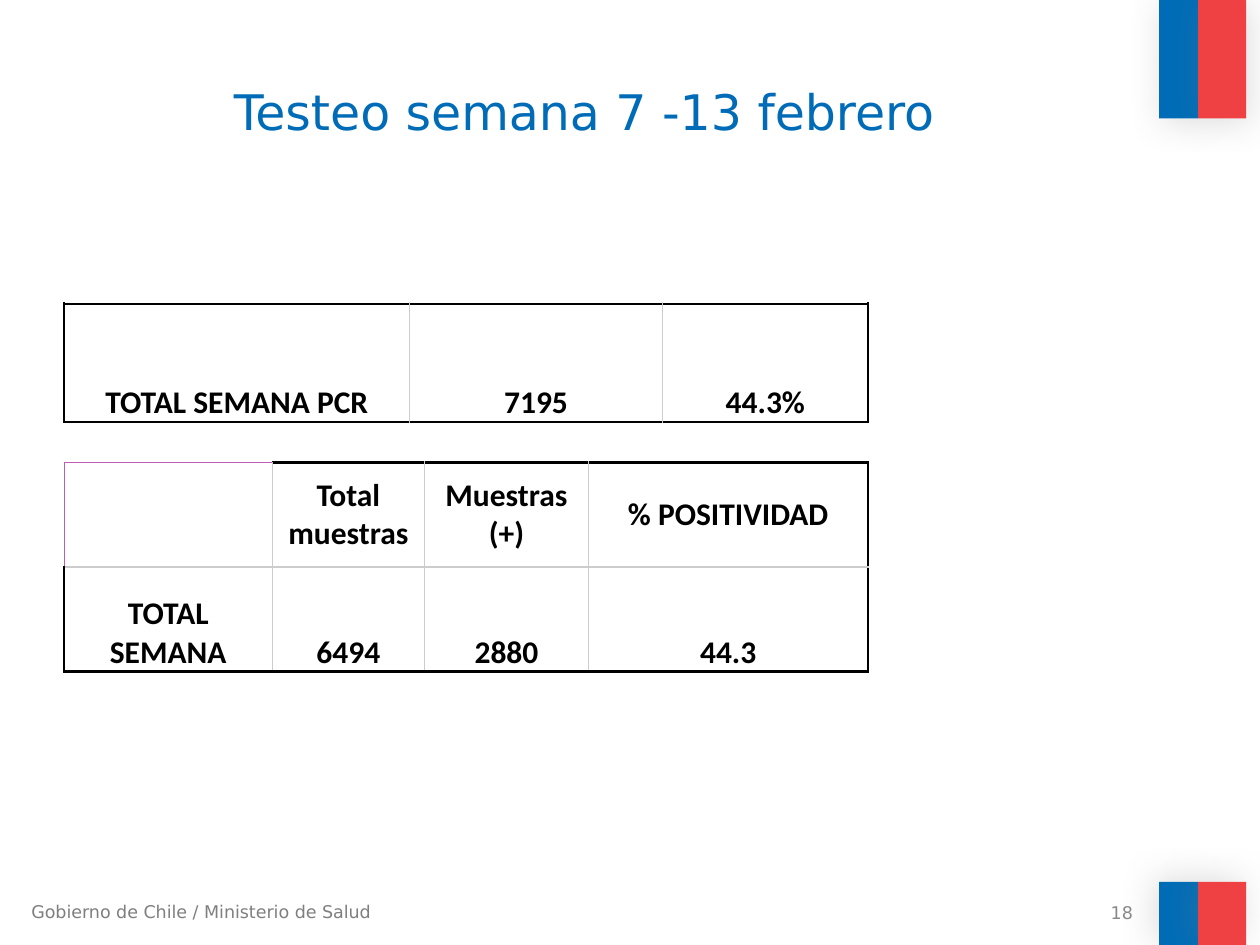
import pptx
import pptx.dml.color
import pptx.enum.shapes
import pptx.enum.text
import pptx.oxml
import pptx.oxml.ns
import pptx.util

Inches = pptx.util.Inches
Pt = pptx.util.Pt
ALIGN = pptx.enum.text.PP_ALIGN
ANCHOR = pptx.enum.text.MSO_ANCHOR
NS = pptx.oxml.ns.nsdecls("a")

COLORS = {
    "blue": "006CB7", "red": "EF4144", "shade": "808080",
    "foot": "7F7F7F", "page": "898989", "black": "000000",
    "white": "FFFFFF", "grid": "CCCCCC", "blank": "C05CB4",
}


def rgb(name):
    return pptx.dml.color.RGBColor.from_string(COLORS[name])


def style(frame, size, font, color, align, bold=False):
    for para in frame.paragraphs:
        para.alignment = align
        for run in para.runs:
            run.font.size = Pt(size)
            run.font.name = font
            run.font.bold = bold
            run.font.color.rgb = rgb(color)


def add_bar(slide, box, color, angle):
    """Add a flag stripe with a soft shadow cast at the given angle."""
    bar = slide.shapes.add_shape(
        pptx.enum.shapes.MSO_SHAPE.RECTANGLE, *map(Inches, box))
    bar.fill.solid()
    bar.fill.fore_color.rgb = rgb(color)
    bar.line.fill.background()
    bar.element.spPr.append(pptx.oxml.parse_xml(
        f'<a:effectLst {NS}><a:outerShdw blurRad="{Pt(20)}" dist="{Pt(3)}" '
        f'dir="{angle * 60000}" rotWithShape="0">'
        f'<a:srgbClr val="{COLORS["shade"]}"><a:alpha val="25000"/>'
        '</a:srgbClr></a:outerShdw></a:effectLst>'))


def add_title(slide, text):
    title = slide.shapes.title
    title.left, title.top = Inches(0.17), Inches(0.6)
    title.width, title.height = Inches(8.93), Inches(0.82)
    frame = title.text_frame
    frame.text = text
    frame.vertical_anchor = ANCHOR.TOP
    style(frame, 28, "DejaVu Sans", "blue", ALIGN.CENTER)


def add_note(slide, box, text, color, align, anchor):
    frame = slide.shapes.add_textbox(*map(Inches, box)).text_frame
    frame.word_wrap = True
    frame.vertical_anchor = anchor
    frame.text = text
    style(frame, 10, "DejaVu Sans", color, align)


def set_edge(cell, side, color, width):
    cell._tc.get_or_add_tcPr().append(pptx.oxml.parse_xml(
        f'<a:ln{side} {NS} w="{Pt(width)}"><a:solidFill>'
        f'<a:srgbClr val="{COLORS[color]}"/></a:solidFill></a:ln{side}>'))


def set_cell(cell, text, outer, anchor):
    """Fill a cell; outer maps each side to whether it is on the table's rim."""
    for side, rim in outer.items():
        if rim and not text:
            set_edge(cell, side, "blank", 0.75)
        elif rim:
            set_edge(cell, side, "black", 1.5)
        else:
            set_edge(cell, side, "grid", 0.75)
    cell.fill.solid()
    cell.fill.fore_color.rgb = rgb("white")
    cell.margin_left = cell.margin_right = Inches(0.03)
    cell.margin_top = cell.margin_bottom = 0
    cell.vertical_anchor = anchor
    cell.text_frame.text = text
    style(cell.text_frame, 18, "Calibri", "black", ALIGN.CENTER, True)


def add_table(slide, top, widths, height, rows):
    last_row, last_col = len(rows) - 1, len(widths) - 1
    table = slide.shapes.add_table(
        len(rows), len(widths), Inches(0.51), Inches(top),
        Inches(sum(widths)), Inches(height * len(rows))).table
    for col, width in zip(table.columns, widths):
        col.width = Inches(width)
    for r, texts in enumerate(rows):
        table.rows[r].height = Inches(height)
        anchor = ANCHOR.BOTTOM if r == last_row else ANCHOR.MIDDLE
        for c, text in enumerate(texts):
            outer = {"L": c == 0, "R": c == last_col,
                     "T": r == 0, "B": r == last_row}
            set_cell(table.cell(r, c), text, outer, anchor)


def main():
    deck = pptx.Presentation()
    deck.slide_width, deck.slide_height = Inches(10), Inches(7.5)
    slide = deck.slides.add_slide(deck.slide_layouts[5])

    for top, height, angle in ((0, 0.94, 45), (7, 0.5, 215)):
        add_bar(slide, (9.2, top, 0.31, height), "blue", angle)
        add_bar(slide, (9.51, top, 0.38, height), "red", angle)

    add_note(slide, (0.15, 7.1, 3.02, 0.27),
             "Gobierno de Chile / Ministerio de Salud",
             "foot", ALIGN.LEFT, ANCHOR.TOP)
    add_title(slide, "Testeo semana 7 -13 febrero")
    add_note(slide, (6.76, 7.14, 2.33, 0.21), "18",
             "page", ALIGN.RIGHT, ANCHOR.MIDDLE)

    add_table(slide, 2.41, (2.74, 2.01, 1.63), 0.94,
              [("TOTAL SEMANA PCR", "7195", "44.3%")])
    add_table(slide, 3.67, (1.65, 1.21, 1.3, 2.22), 0.83,
              [("", "Total muestras", "Muestras (+)", "% POSITIVIDAD"),
               ("TOTAL SEMANA", "6494", "2880", "44.3")])
    deck.save("out.pptx")


if __name__ == "__main__":
    main()
